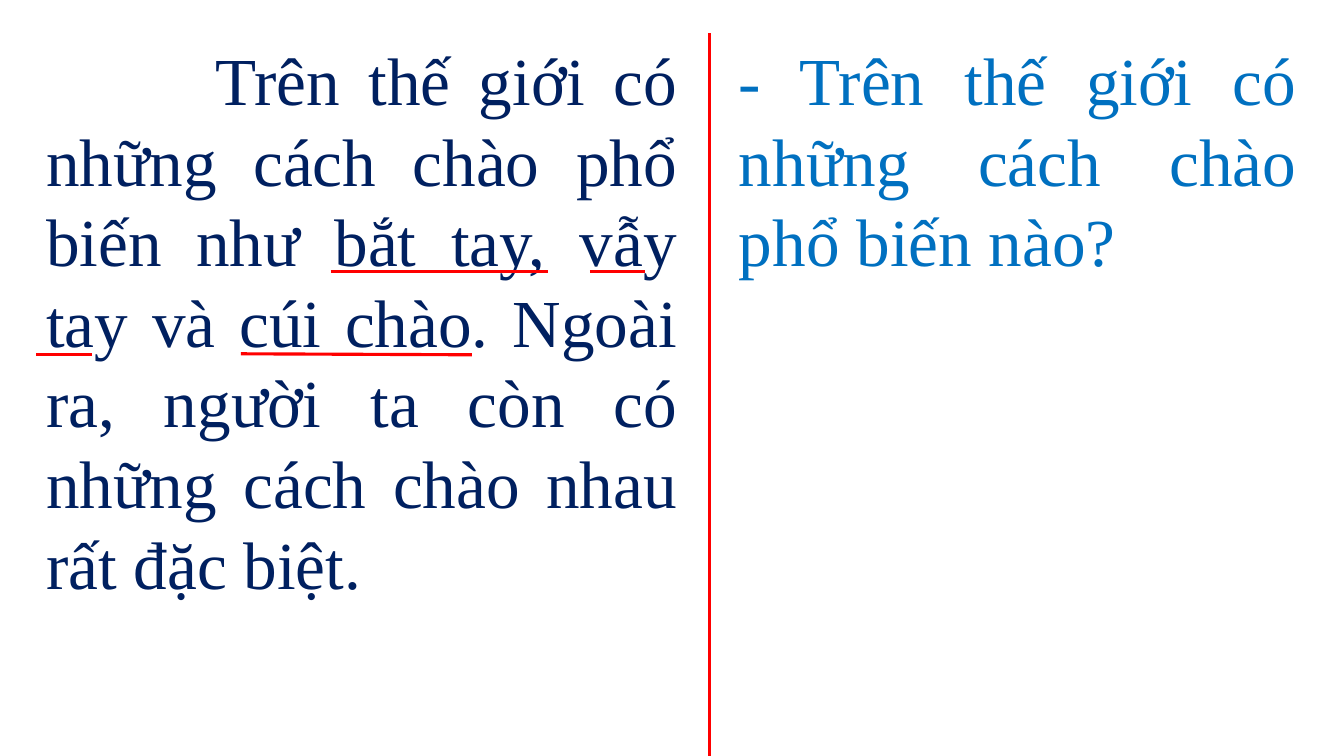
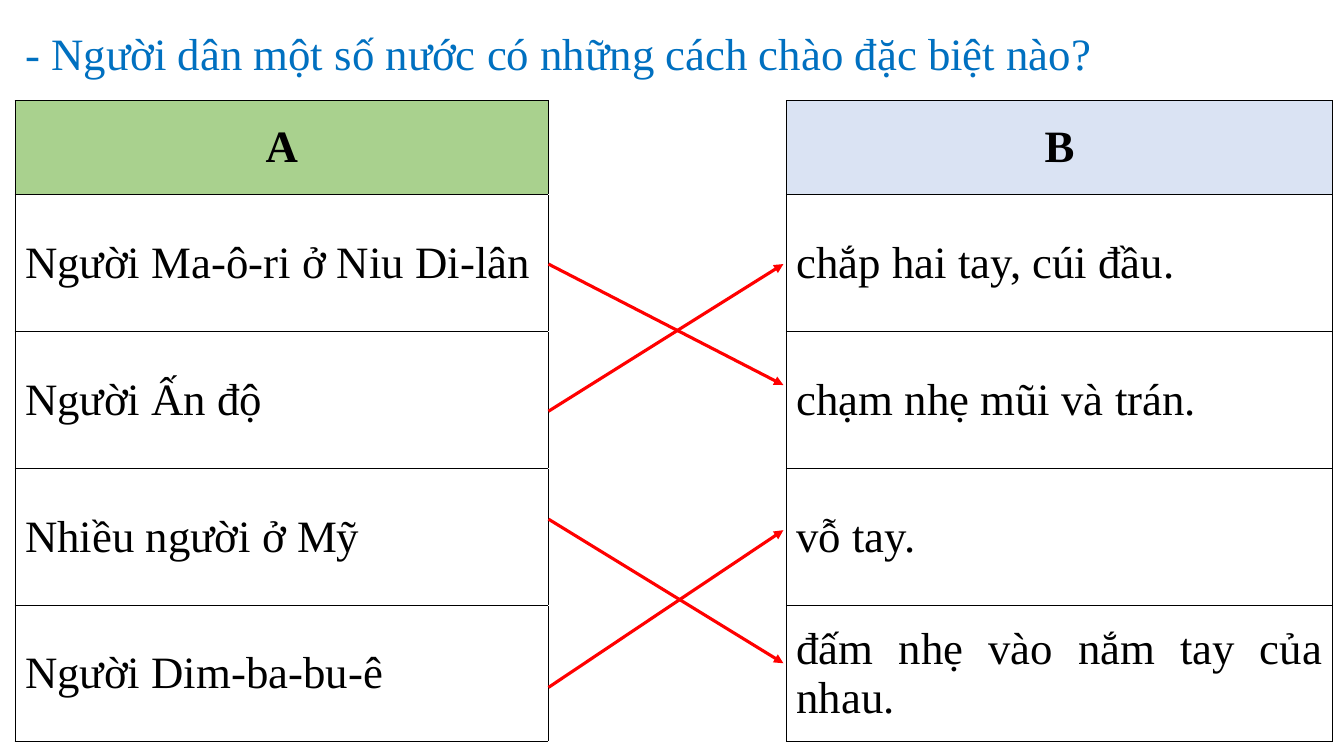
from dataclasses import dataclass

import pptx
import pptx.dml.color
import pptx.enum.shapes
import pptx.enum.text
import pptx.oxml
import pptx.oxml.ns
import pptx.util

# Shared scale and style
PX = 9144  # EMU per px, 100 px to the inch
FONT = "Times New Roman"
RED, BLUE, NAVY = "FF0000", "0070C0", "002060"
BLACK, WHITE, GREEN, PALE_BLUE = "000000", "FFFFFF", "A9D18E", "DAE3F3"
Align = pptx.enum.text.PP_ALIGN
Anchor = pptx.enum.text.MSO_ANCHOR


@dataclass
class Line:
    x1: int
    y1: int
    x2: int
    y2: int
    arrow: bool = False


@dataclass
class Passage:
    left: int
    width: int
    height: int
    text: str
    color: str
    indent: int = 0


@dataclass
class Row:
    height: int
    left: str
    right: str
    justify_right: bool = False


def px(length: int) -> pptx.util.Emu:
    return pptx.util.Emu(length * PX)


def rgb(color: str) -> pptx.dml.color.RGBColor:
    return pptx.dml.color.RGBColor.from_string(color)


def write(frame, text: str, *, size: int = 32, color: str = BLACK, bold: bool = False,
          align=Align.LEFT, indent: int = 0) -> None:
    para = frame.paragraphs[0]
    para.alignment = align
    if indent:
        para._p.get_or_add_pPr().set("indent", str(px(indent)))
    span = para.add_run()
    span.text = text
    span.font.name = FONT
    span.font.size = pptx.util.Pt(size)
    span.font.bold = bold
    span.font.color.rgb = rgb(color)


def draw_line(page, line: Line) -> None:
    connector = page.shapes.add_connector(
        pptx.enum.shapes.MSO_CONNECTOR.STRAIGHT,
        px(line.x1), px(line.y1), px(line.x2), px(line.y2))
    connector.line.color.rgb = rgb(RED)
    connector.line.width = pptx.util.Pt(2.25)
    if line.arrow:
        outline = connector.line._get_or_add_ln()
        tail = pptx.oxml.parse_xml(
            f'<a:tailEnd {pptx.oxml.ns.nsdecls("a")} type="triangle"/>')
        outline.append(tail)
    connector._element.spPr.append(
        pptx.oxml.parse_xml(f'<a:effectLst {pptx.oxml.ns.nsdecls("a")}/>'))


def draw_passage(page, passage: Passage) -> None:
    box = page.shapes.add_textbox(
        px(passage.left), px(33), px(passage.width), px(passage.height))
    box.text_frame.word_wrap = True
    box.text_frame.auto_size = pptx.enum.text.MSO_AUTO_SIZE.SHAPE_TO_FIT_TEXT
    write(box.text_frame, passage.text, size=48, color=passage.color,
          align=Align.JUSTIFY, indent=passage.indent)


def set_title(page, text: str) -> None:
    title = page.shapes.title
    title.left, title.top, title.width, title.height = px(15), px(21), px(1320), px(64)
    title.fill.solid()
    title.fill.fore_color.rgb = rgb(WHITE)
    title.text_frame.word_wrap = True
    title.text_frame.auto_size = pptx.enum.text.MSO_AUTO_SIZE.NONE
    title.text_frame.vertical_anchor = Anchor.TOP
    write(title.text_frame, text, color=BLUE, align=Align.JUSTIFY)


def style_cell(cell, fill: str, row_edge: str = BLACK) -> None:
    """Sides are black; row_edge colours the top and bottom."""
    properties = cell._tc.get_or_add_tcPr()
    for side, color in (("L", BLACK), ("R", BLACK), ("T", row_edge), ("B", row_edge)):
        properties.append(pptx.oxml.parse_xml(
            f'<a:ln{side} {pptx.oxml.ns.nsdecls("a")} w="12700"><a:solidFill>'
            f'<a:srgbClr val="{color}"/></a:solidFill></a:ln{side}>'))
    cell.fill.solid()
    cell.fill.fore_color.rgb = rgb(fill)
    cell.vertical_anchor = Anchor.MIDDLE


def draw_table(page, rows: list[Row], widths: list[int]) -> None:
    table = page.shapes.add_table(
        len(rows), len(widths), px(15), px(100),
        px(sum(widths)), px(sum(row.height for row in rows))).table
    table.first_row = table.horz_banding = False
    for column, width in zip(table.columns, widths):
        column.width = px(width)
    for index, row in enumerate(rows):
        table.rows[index].height = px(row.height)
        header = index == 0
        left, gap, right = (table.cell(index, column) for column in range(3))
        style_cell(left, GREEN if header else WHITE)
        style_cell(gap, WHITE, row_edge=WHITE)
        style_cell(right, PALE_BLUE if header else WHITE)
        align = Align.CENTER if header else Align.LEFT
        write(left.text_frame, row.left, bold=header, align=align)
        write(right.text_frame, row.right, bold=header,
              align=Align.JUSTIFY if row.justify_right else align)


# Content
DIVIDER = Line(704, 33, 704, 750)
PASSAGES = [
    Passage(723, 573, 252, "- Trên thế giới có những cách chào phổ biến nào?", BLUE),
    Passage(36, 646, 576,
            "Trên thế giới có những cách chào phổ biến như bắt tay, vẫy tay và "
            "cúi chào. Ngoài ra, người ta còn có những cách chào nhau rất đặc biệt.",
            NAVY, indent=168),
]
UNDERLINES = [
    Line(328, 269, 544, 269),
    Line(585, 269, 640, 269),
    Line(36, 352, 91, 352),
    Line(239, 351, 468, 352),
]
GREETINGS = [
    Row(93, "A", "B"),
    Row(136, "Người Ma-ô-ri ở Niu Di-lân", "chắp hai tay, cúi đầu."),
    Row(136, "Người Ấn độ", "chạm nhẹ mũi và trán."),
    Row(136, "Nhiều người ở Mỹ", "vỗ tay."),
    Row(135, "Người Dim-ba-bu-ê", "đấm nhẹ vào nắm tay của nhau.", justify_right=True),
]
MATCHES = [(262, 382), (682, 526), (408, 262), (515, 658)]  # start and end heights


def build_reading(deck) -> None:
    page = deck.slides.add_slide(deck.slide_layouts.get_by_name("Blank"))
    draw_line(page, DIVIDER)
    for passage in PASSAGES:
        draw_passage(page, passage)
    for underline in UNDERLINES:
        draw_line(page, underline)


def build_matching(deck) -> None:
    page = deck.slides.add_slide(deck.slide_layouts.get_by_name("Title Only"))
    set_title(page, "- Người dân một số nước có những cách chào đặc biệt nào?")
    draw_table(page, GREETINGS, [529, 236, 542])
    for start, end in MATCHES:
        draw_line(page, Line(544, start, 777, end, arrow=True))


def main() -> None:
    deck = pptx.Presentation()
    deck.slide_width, deck.slide_height = px(1333), px(750)
    build_reading(deck)
    build_matching(deck)
    deck.save("out.pptx")


if __name__ == "__main__":
    main()
